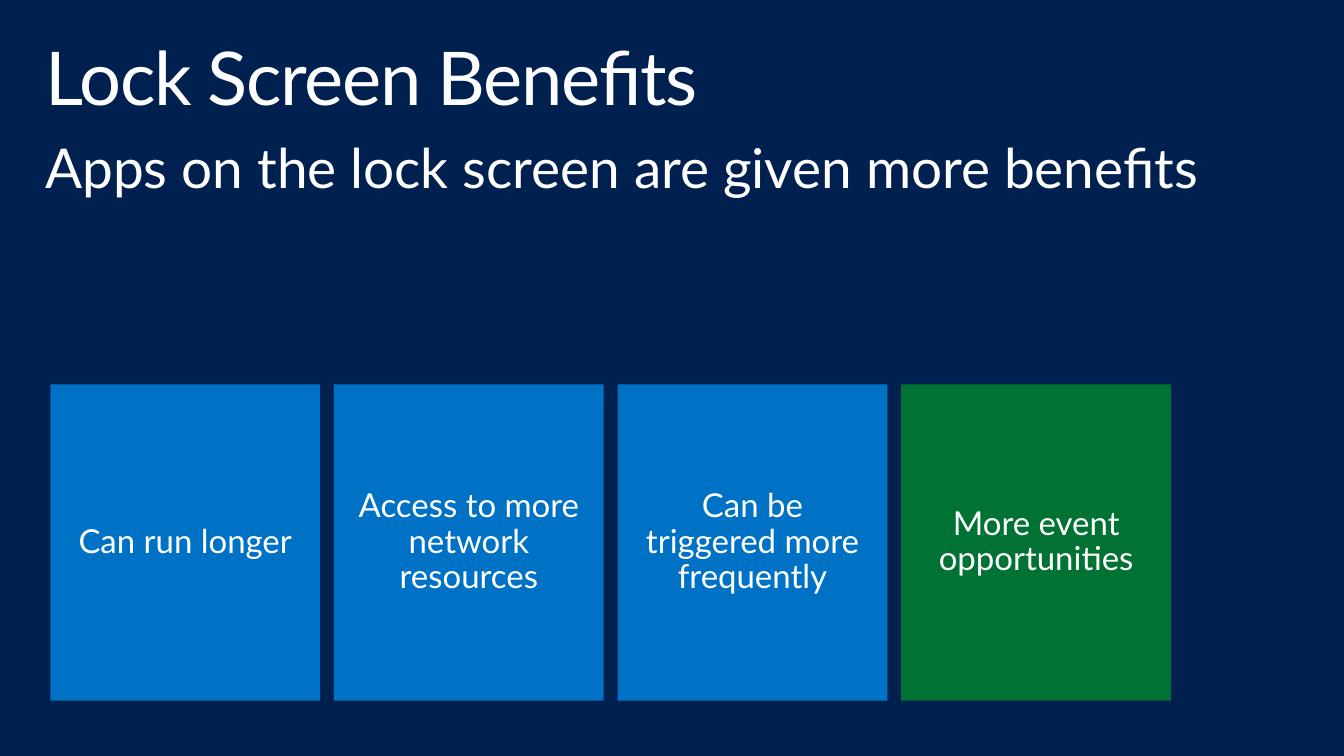
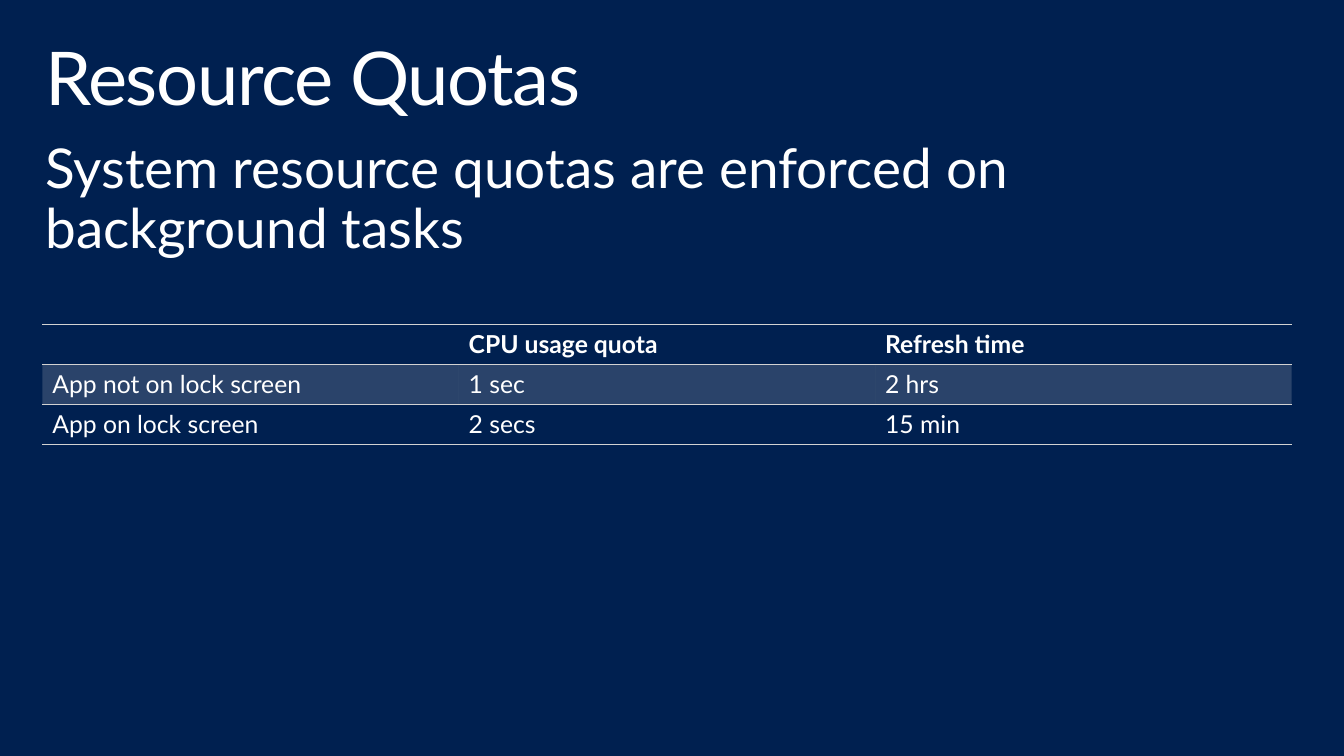
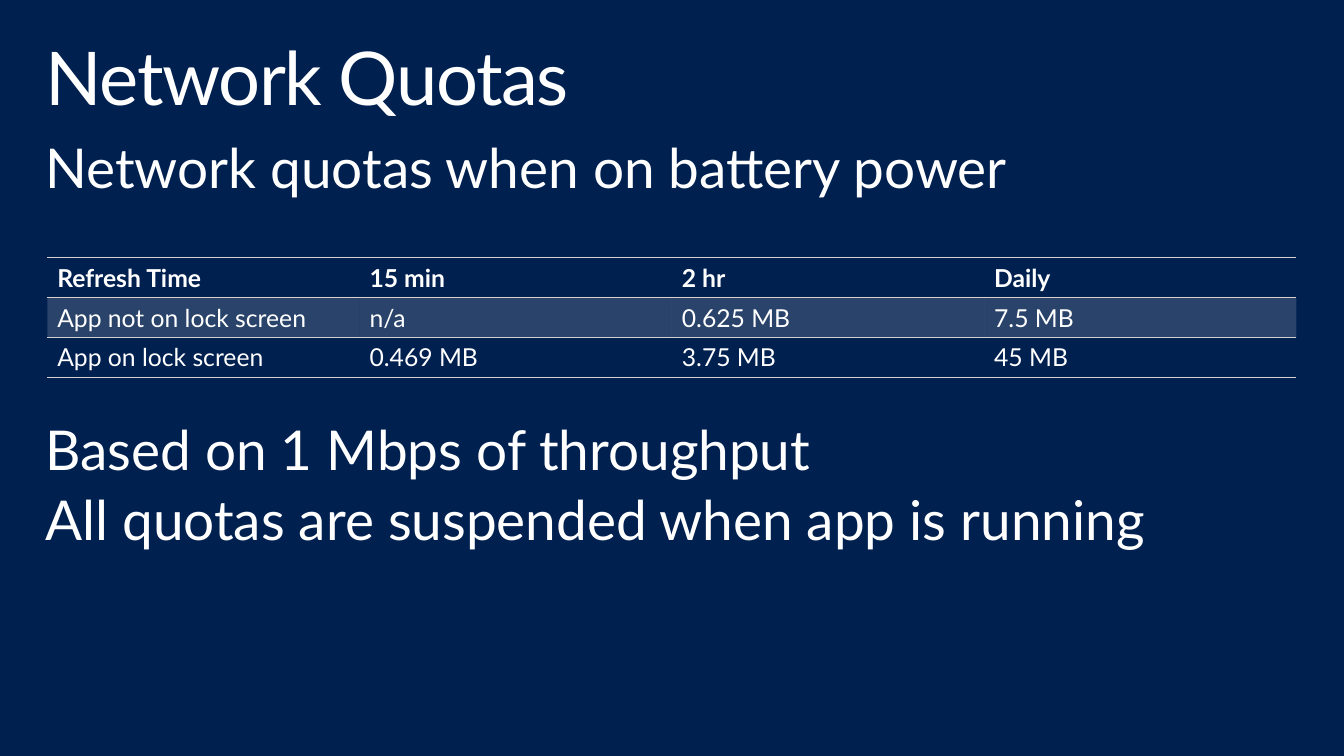
import pptx
import pptx.util
import pptx.dml.color
import pptx.enum.shapes
import pptx.enum.text
import pptx.oxml
import pptx.oxml.ns
import lxml.etree

RGB = pptx.dml.color.RGBColor
ALIGN = pptx.enum.text.PP_ALIGN
ANCHOR = pptx.enum.text.MSO_ANCHOR
Pt = pptx.util.Pt
qn = pptx.oxml.ns.qn

NAVY = RGB(0x00, 0x20, 0x50)
BLUE = RGB(0x00, 0x72, 0xC6)
GREEN = RGB(0x00, 0x72, 0x33)
SILVER = RGB(0xD2, 0xD2, 0xD2)
WHITE = RGB(0xFF, 0xFF, 0xFF)
FONT = "Lato"

UNIT = pptx.util.Inches(0.1)
COLS, ROWS = 136, 76.5
TITLE_BOX = (3, 3.2, 130, 10)
BODY_TOP = 13.3
TILE_GAP = 1.4
NO_STYLE = "{2D5ABB26-0587-4C30-8999-92F81FD0307C}"
BAND_ALPHA = "20000"
RULE_WIDTH = Pt(1)


def span(n):
    """Turn a count of grid units into a length."""
    return int(n * UNIT)


def assign(obj, **values):
    """Set attributes of an object from format values."""
    for name, value in values.items():
        setattr(obj, name, value)


def place(sp, box):
    """Move a shape to a box of grid units."""
    assign(sp, **dict(zip(("left", "top", "width", "height"), map(span, box))))


def frame(sp, anchor, inset_x, inset_y):
    """Set the anchor and insets of a text frame and return it."""
    tf = sp.text_frame
    x, y = span(inset_x), span(inset_y)
    assign(tf, word_wrap=True, auto_size=pptx.enum.text.MSO_AUTO_SIZE.NONE,
           vertical_anchor=anchor, margin_left=x, margin_right=x,
           margin_top=y, margin_bottom=y)
    return tf


def write(p, text, size, bold=False, **paragraph):
    """Write one formatted run into a paragraph and return the run."""
    assign(p, **paragraph)
    r = p.add_run()
    r.text = text
    assign(r.font, name=FONT, size=Pt(size), bold=bold)
    r.font.color.rgb = WHITE
    return r


def add_slide(prs, title, lines, body_rows):
    """Add a slide with its title and body; lines pair text with space before."""
    s = prs.slides.add_slide(prs.slide_layouts[1])
    sp = s.shapes.title
    place(sp, TITLE_BOX)
    tf = frame(sp, ANCHOR.TOP, 1.6, 1)
    r = write(tf.paragraphs[0], title, 54, alignment=ALIGN.LEFT, line_spacing=0.9)
    r.font._element.set("spc", "-100")

    body = s.placeholders[1]
    place(body, (TITLE_BOX[0], BODY_TOP, TITLE_BOX[2], body_rows))
    tf = frame(body, ANCHOR.TOP, 1.6, 1)
    for i, (text, before) in enumerate(lines):
        p = tf.add_paragraph() if i else tf.paragraphs[0]
        write(p, text, 40, alignment=ALIGN.LEFT, line_spacing=0.9,
              space_before=Pt(before))
        pPr = p._p.get_or_add_pPr()
        for name in ("marL", "indent"):
            pPr.set(name, "0")
        lxml.etree.SubElement(pPr, qn("a:buNone"))
    return s


def add_tiles(s, box, tiles):
    """Fill a box with equal tiles in a row; tiles pair text with colour."""
    left, top, width, height = box
    pitch = (width + TILE_GAP) / len(tiles)
    for i, (text, colour) in enumerate(tiles):
        sp = s.shapes.add_shape(pptx.enum.shapes.MSO_SHAPE.RECTANGLE, 0, 0, 0, 0)
        place(sp, (left + i * pitch, top, pitch - TILE_GAP, height))
        sp.shadow.inherit = False
        sp.fill.solid()
        sp.fill.fore_color.rgb = colour
        sp.line.fill.background()
        tf = frame(sp, ANCHOR.MIDDLE, 2, 1.6)
        write(tf.paragraphs[0], text, 24, alignment=ALIGN.CENTER, line_spacing=0.9)


def add_rule(cell, edge):
    """Draw a thin rule on one edge of a table cell."""
    ln = pptx.oxml.parse_xml(
        f'<a:{edge} {pptx.oxml.ns.nsdecls("a")} w="{RULE_WIDTH}"><a:solidFill>'
        f'<a:srgbClr val="{SILVER}"/></a:solidFill></a:{edge}>')
    cell._tc.get_or_add_tcPr().insert(0, ln)


def add_quota_table(s, box, rows):
    """Add a ruled table with a bold header and a shaded first body row."""
    t = s.shapes.add_table(len(rows), len(rows[0]), *map(span, box)).table
    assign(t, first_row=True, horz_banding=False)
    t._tbl.tblPr.find(qn("a:tableStyleId")).text = NO_STYLE
    for i, row in enumerate(rows):
        for j, text in enumerate(row):
            cell = t.cell(i, j)
            if i == 1:
                cell.fill.solid()
                cell.fill.fore_color.rgb = SILVER
                colour = cell._tc.tcPr.find(".//" + qn("a:srgbClr"))
                lxml.etree.SubElement(colour, qn("a:alpha")).set("val", BAND_ALPHA)
            else:
                cell.fill.background()
            if i != 1:
                add_rule(cell, "lnB")
            else:
                add_rule(cell, "lnT")
            if i == 0:
                add_rule(cell, "lnT")
            if text:
                write(cell.text_frame.paragraphs[0], text, 18, bold=i == 0)


def main():
    """Build the three slides and save them."""
    prs = pptx.Presentation()
    assign(prs, slide_width=span(COLS), slide_height=span(ROWS))
    fill = prs.slide_master.background.fill
    fill.solid()
    fill.fore_color.rgb = NAVY

    s = add_slide(prs, "Lock Screen Benefits",
                  [("Apps on the lock screen are given more benefits", 8)], 15.5)
    add_tiles(s, (5.1, 38.9, 113.4, 32), [
        ("Can run longer", BLUE),
        ("Access to more network resources", BLUE),
        ("Can be triggered more frequently", BLUE),
        ("More event opportunities", GREEN),
    ])

    s = add_slide(prs, "Resource Quotas",
                  [("System resource quotas are enforced on background tasks", 8)], 14.1)
    add_quota_table(s, (4.3, 32.8, 126.4, 12.2), [
        ("", "CPU usage quota", "Refresh time"),
        ("App not on lock screen", "1 sec", "2 hrs"),
        ("App on lock screen", "2 secs", "15 min"),
    ])

    s = add_slide(prs, "Network Quotas", [
        ("Network quotas when on battery power", 8),
        ("Based on 1 Mbps of throughput", 162),
        ("All quotas are suspended when app is running", 8),
    ], 45.1)
    add_quota_table(s, (4.8, 26.1, 126.4, 12.1), [
        ("Refresh Time", "15 min", "2 hr", "Daily"),
        ("App not on lock screen", "n/a", "0.625 MB", "7.5 MB"),
        ("App on lock screen", "0.469 MB", "3.75 MB", "45 MB"),
    ])

    prs.save("out.pptx")


if __name__ == "__main__":
    main()
